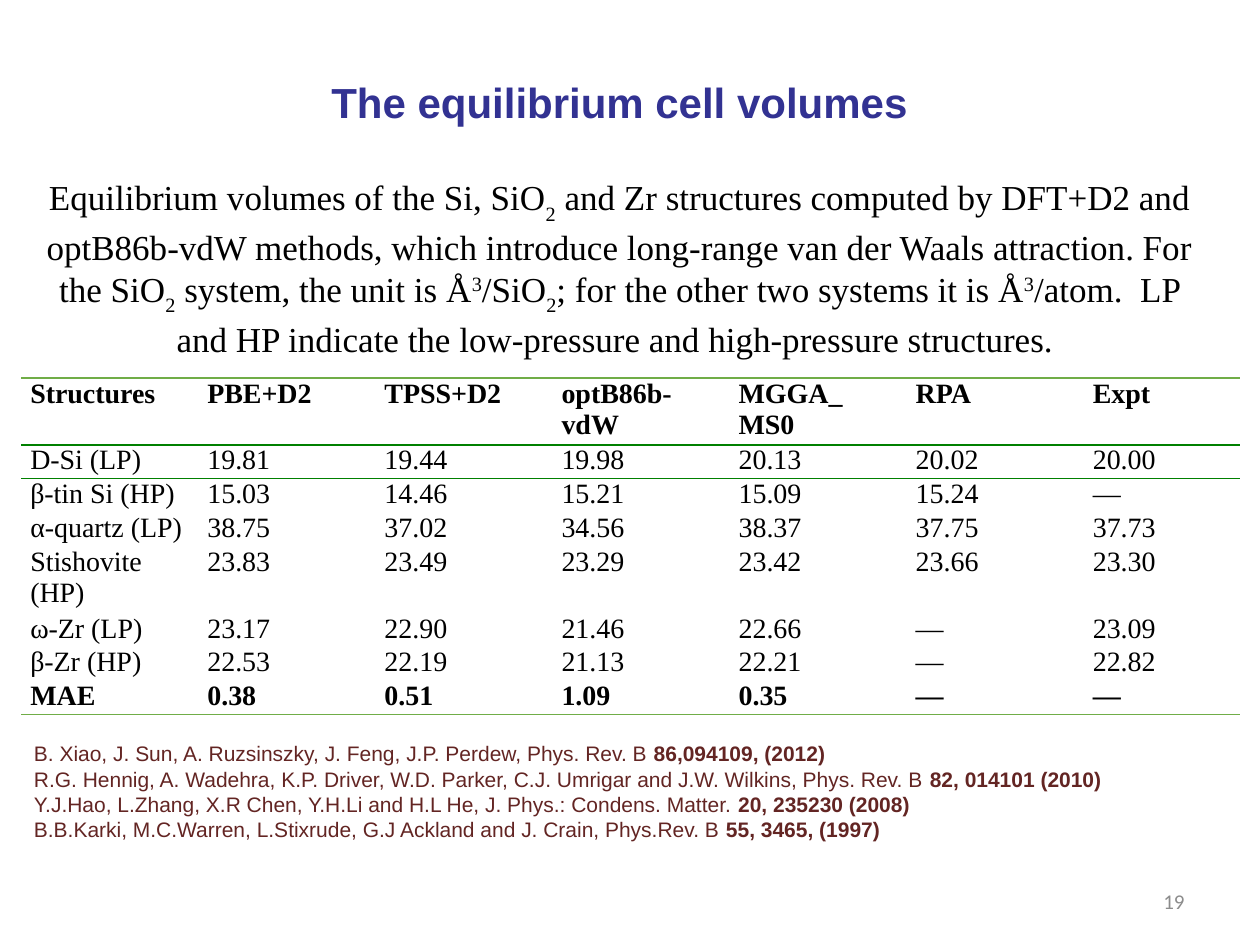
from dataclasses import dataclass

import lxml.etree
import pptx
import pptx.dml.color
import pptx.enum.text
import pptx.oxml.ns
import pptx.util

Cm = pptx.util.Cm
Align = pptx.enum.text.PP_ALIGN
Anchor = pptx.enum.text.MSO_ANCHOR
qn = pptx.oxml.ns.qn


@dataclass(frozen=True)
class Theme:
    heading: tuple = ("Arial", 24, "323292")
    intro: tuple = ("Times New Roman", 20, "000000")
    cell: tuple = ("Times New Roman", 16, "000000")
    reference: tuple = ("Arial", 12, "632523")
    number: tuple = ("Calibri", 12, "8C8C8C")
    outer_rule: str = "70AD47"
    header_rule: str = "008000"
    plain_table: str = "{2D5ABB26-0587-4C30-8999-92F81FD0307C}"


HEADING = "The equilibrium cell volumes"
INTRO = [
    ("Equilibrium volumes of the Si, SiO", 0), ("2", -30),
    (" and Zr structures computed by DFT+D2 and optB86b-vdW methods, which "
     "introduce long-range van der Waals attraction. For the SiO", 0), ("2", -30),
    (" system, the unit is Å", 0), ("3", 30), ("/SiO", 0), ("2", -30),
    ("; for the other two systems it is Å", 0), ("3", 30),
    ("/atom.  LP and HP indicate the low-pressure and high-pressure structures. ", 0),
]
VOLUMES = [
    ["Structures", "PBE+D2", "TPSS+D2", "optB86b-vdW", "MGGA_\nMS0", "RPA", "Expt"],
    ["D-Si (LP)", "19.81", "19.44", "19.98", "20.13", "20.02", "20.00"],
    ["β-tin Si (HP)", "15.03", "14.46", "15.21", "15.09", "15.24", "—"],
    ["α-quartz (LP)", "38.75", "37.02", "34.56", "38.37", "37.75", "37.73"],
    ["Stishovite (HP)", "23.83", "23.49", "23.29", "23.42", "23.66", "23.30"],
    ["ω-Zr (LP)", "23.17", "22.90", "21.46", "22.66", "—", "23.09"],
    ["β-Zr (HP)", "22.53", "22.19", "21.13", "22.21", "—", "22.82"],
    ["MAE", "0.38", "0.51", "1.09", "0.35", "—", "—"],
]
COLUMN_WIDTHS = [3.57] * 6 + [3.15]
ROW_HEIGHTS = [1.35] + [0.68] * 3 + [1.35] + [0.68] * 3
REFERENCES = [
    ("B. Xiao, J. Sun, A. Ruzsinszky, J. Feng, J.P. Perdew, Phys. Rev. B ",
     "86,094109, (2012)"),
    ("R.G. Hennig, A. Wadehra, K.P. Driver, W.D. Parker, C.J. Umrigar and "
     "J.W. Wilkins, Phys. Rev. B ", "82, 014101 (2010)"),
    ("Y.J.Hao, L.Zhang, X.R Chen, Y.H.Li and H.L He, J. Phys.: Condens. Matter. ",
     "20, 235230 (2008)"),
    ("B.B.Karki, M.C.Warren, L.Stixrude, G.J Ackland and J. Crain, Phys.Rev. B ",
     "55, 3465, (1997)"),
]


class SlideBuilder:
    def __init__(self, prs, theme):
        self.theme = theme
        self.s = prs.slides.add_slide(prs.slide_layouts[1])

    def place(self, sp, left, top, width, height, anchor):
        sp.left, sp.top, sp.width, sp.height = map(Cm, (left, top, width, height))
        tf = sp.text_frame
        tf.word_wrap = True
        tf.auto_size = pptx.enum.text.MSO_AUTO_SIZE.NONE
        tf.vertical_anchor = anchor
        return tf

    def paragraph(self, tf, index, align):
        p = tf.paragraphs[0] if index == 0 else tf.add_paragraph()
        p.alignment = align
        p.space_before = pptx.util.Pt(0)
        return p

    def run(self, p, text, style, bold=False, baseline=0):
        r = p.add_run()
        r.text = text
        name, size, color = style
        r.font.name, r.font.size, r.font.bold = name, pptx.util.Pt(size), bold
        r.font.color.rgb = pptx.dml.color.RGBColor.from_string(color)
        if baseline:
            r.font._element.set("baseline", str(baseline * 1000))

    def title(self, heading, intro, *box):
        tf = self.place(self.s.shapes.title, *box, Anchor.MIDDLE)
        self.run(self.paragraph(tf, 0, Align.CENTER), heading, self.theme.heading, True)
        p = self.paragraph(tf, 1, Align.CENTER)
        p.space_before = pptx.util.Pt(28)
        for text, baseline in intro:
            self.run(p, text, self.theme.intro, baseline=baseline)

    def references(self, entries, *box):
        tf = self.place(self.s.placeholders[1], *box, Anchor.TOP)
        for i, (authors, issue) in enumerate(entries):
            p = self.paragraph(tf, i, Align.LEFT)
            pPr = p._p.get_or_add_pPr()
            pPr.set("marL", "0")
            pPr.set("indent", "0")
            lxml.etree.SubElement(pPr, qn("a:buNone"))
            self.run(p, authors, self.theme.reference)
            self.run(p, issue, self.theme.reference, True)

    def number(self, text, *box):
        sp = self.s.shapes.add_textbox(0, 0, 0, 0)
        tf = self.place(sp, *box, Anchor.MIDDLE)
        self.run(self.paragraph(tf, 0, Align.RIGHT), text, self.theme.number)

    def border(self, cell, position, side, color):
        ln = lxml.etree.Element(qn("a:" + side), w=str(pptx.util.Pt(1)))
        fill = lxml.etree.SubElement(ln, qn("a:solidFill"))
        lxml.etree.SubElement(fill, qn("a:srgbClr"), val=color)
        cell._tc.get_or_add_tcPr().insert(position, ln)

    def cell(self, cell, text, bold, rules):
        cell.margin_left = cell.margin_right = Cm(0.18)
        cell.margin_top = cell.margin_bottom = 0
        cell.fill.background()
        for position, (side, color) in enumerate(rules):
            self.border(cell, position, side, color)
        for i, line in enumerate(text.split("\n")):
            p = self.paragraph(cell.text_frame, i, Align.JUSTIFY)
            self.run(p, line, self.theme.cell, bold)

    def table(self, rows, widths, heights, left, top):
        size = Cm(sum(widths)), Cm(sum(heights))
        table = self.s.shapes.add_table(
            len(rows), len(widths), Cm(left), Cm(top), *size).table
        table.horz_banding = False
        table._tbl.tblPr.find(qn("a:tableStyleId")).text = self.theme.plain_table
        for column, width in zip(table.columns, widths):
            column.width = Cm(width)
        outer, header = self.theme.outer_rule, self.theme.header_rule
        last = len(rows) - 1
        rules = {0: [("lnT", outer), ("lnB", header)],
                 1: [("lnT", header)],
                 last: [("lnB", outer)]}
        for i, values in enumerate(rows):
            table.rows[i].height = Cm(heights[i])
            for j, value in enumerate(values):
                self.cell(table.cell(i, j), value, i in (0, last), rules.get(i, []))


def main():
    prs = pptx.Presentation()
    prs.slide_width, prs.slide_height = Cm(25.4), Cm(19.05)
    builder = SlideBuilder(prs, Theme())
    builder.title(HEADING, INTRO, 0.64, 1.52, 23.7, 5.74)
    builder.table(VOLUMES, COLUMN_WIDTHS, ROW_HEIGHTS, 0.43, 7.62)
    builder.references(REFERENCES, 0.43, 14.81, 24.13, 3.33)
    builder.number("19", 18.21, 17.65, 5.92, 1.02)
    prs.save("out.pptx")


if __name__ == "__main__":
    main()
